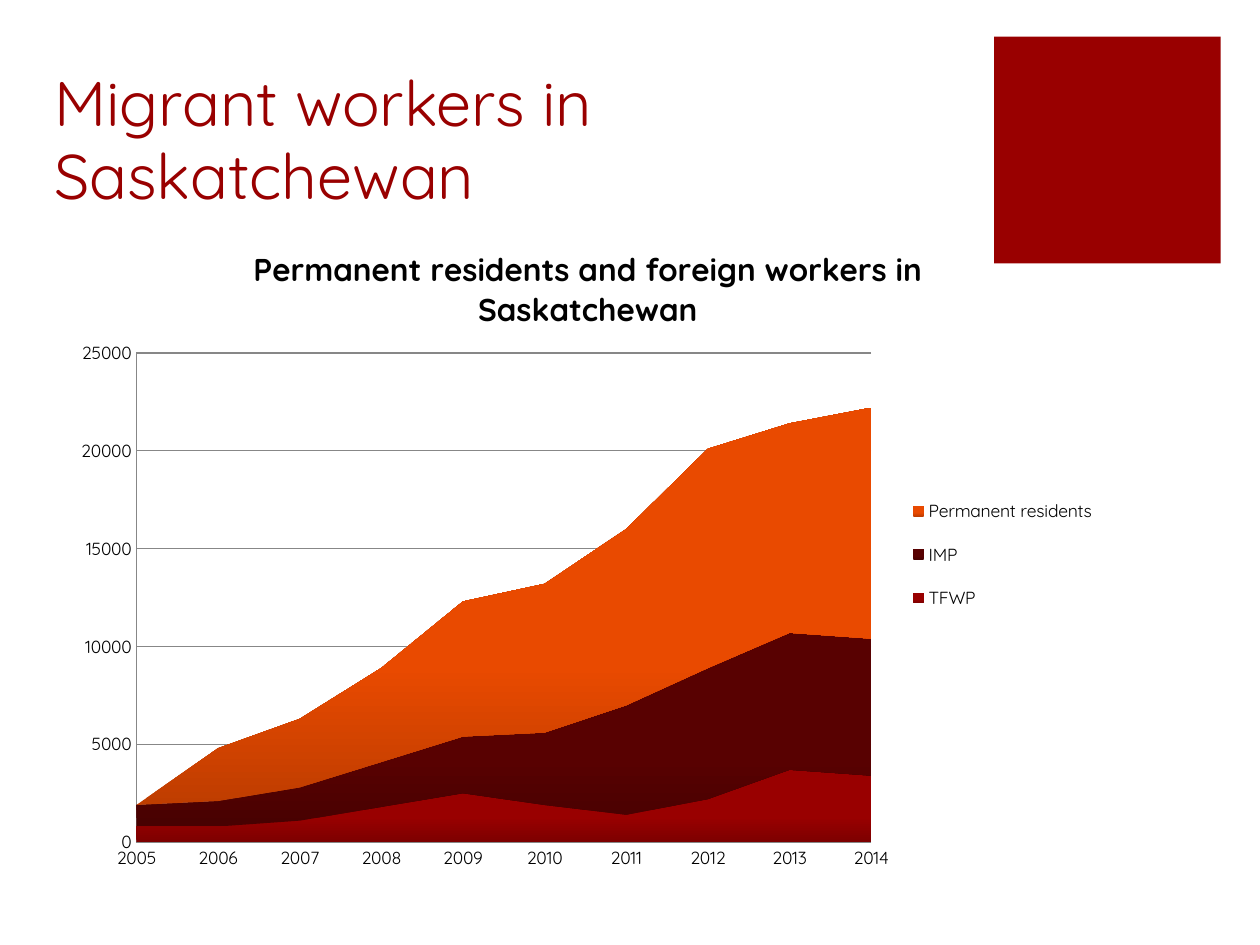
from dataclasses import dataclass
from typing import Any

from lxml.etree import SubElement
from pptx import Presentation
from pptx.chart.chart import Chart
from pptx.chart.data import CategoryChartData
from pptx.dml.color import RGBColor
from pptx.enum.chart import XL_CHART_TYPE, XL_LEGEND_POSITION, XL_TICK_MARK
from pptx.enum.shapes import MSO_SHAPE
from pptx.enum.text import MSO_ANCHOR
from pptx.oxml import parse_xml
from pptx.oxml.ns import nsdecls, qn
from pptx.slide import Slide
from pptx.util import Cm, Pt


@dataclass(frozen=True)
class Theme:
    font: str = "Quicksand"
    red: RGBColor = RGBColor(0x99, 0x00, 0x00)
    maroon: RGBColor = RGBColor(0x58, 0x01, 0x01)
    orange: RGBColor = RGBColor(0xE9, 0x4A, 0x00)
    black: RGBColor = RGBColor(0x00, 0x00, 0x00)
    grid: RGBColor = RGBColor(0x87, 0x87, 0x87)
    title_size: Pt = Pt(36)
    chart_title_size: Pt = Pt(18)
    label_size: Pt = Pt(10)


@dataclass(frozen=True)
class Box:
    """Place and size, in centimetres on the slide or as fractions of the chart."""
    left: float
    top: float
    width: float
    height: float

    def lengths(self) -> tuple[Cm, Cm, Cm, Cm]:
        return Cm(self.left), Cm(self.top), Cm(self.width), Cm(self.height)


@dataclass(frozen=True)
class AreaSeries:
    name: str
    values: tuple[int | None, ...]
    color: RGBColor


THEME = Theme()
YEARS = [str(year) for year in range(2005, 2015)]
SERIES = [
    AreaSeries("TFWP", (800, 800, 1100, 1800, 2500, 1900, 1400, 2200, 3700, 3400), THEME.red),
    AreaSeries("IMP", (1100, 1300, 1700, 2300, 2900, 3700, 5600, 6700, 7000, 7000), THEME.maroon),
    AreaSeries("Permanent residents",
               (None, 2700, 3500, 4800, 6900, 7600, 9000, 11200, 10700, 11800), THEME.orange),
]


def apply_format(target: Any, values: dict[str, Any]) -> None:
    for name, value in values.items():
        setattr(target, name, value)


def style_font(font: Any, size: Pt, color: RGBColor, bold: bool = False) -> None:
    apply_format(font, {"name": THEME.font, "size": size, "bold": bold})
    font.color.rgb = color


def add_accent_square(slide: Slide, box: Box) -> None:
    square = slide.shapes.add_shape(MSO_SHAPE.RECTANGLE, *box.lengths())
    square.shadow.inherit = False
    square.fill.solid()
    square.fill.fore_color.rgb = THEME.red
    square.line.fill.background()


def add_title(slide: Slide, text: str, box: Box) -> None:
    frame = slide.shapes.add_textbox(*box.lengths()).text_frame
    apply_format(frame, {"word_wrap": True, "vertical_anchor": MSO_ANCHOR.BOTTOM})
    paragraph = frame.paragraphs[0]
    paragraph.line_spacing = 0.97
    run = paragraph.add_run()
    run.text = text
    style_font(run.font, THEME.title_size, THEME.red)


def manual_layout(box: Box, inner: bool = False) -> Any:
    """Build a chart layout element from fractions of the chart's size."""
    layout = parse_xml(f"<c:layout {nsdecls('c')}><c:manualLayout/></c:layout>")
    settings = {"layoutTarget": "inner"} if inner else {}
    settings |= {"xMode": "edge", "yMode": "edge", "x": box.left, "y": box.top,
                 "w": box.width, "h": box.height}
    for tag, value in settings.items():
        SubElement(layout[0], qn(f"c:{tag}")).set("val", str(value))
    return layout


def shade_area(fill: Any, color: RGBColor) -> None:
    """Fade from a darker shade at the bottom to the plain colour."""
    dark = RGBColor(*(round(channel * 0.82) for channel in color))
    fill.gradient()
    fill.gradient_angle = 90
    for stop, shade, position in zip(fill.gradient_stops, (dark, color), (0, 0.35)):
        stop.color.rgb = shade
        stop.position = position


def style_axes(chart: Chart) -> None:
    for axis in (chart.category_axis, chart.value_axis):
        apply_format(axis, {"major_tick_mark": XL_TICK_MARK.NONE,
                            "minor_tick_mark": XL_TICK_MARK.NONE})
        axis.format.line.color.rgb = THEME.grid
    value_axis = chart.value_axis
    apply_format(value_axis, {"minimum_scale": 0, "maximum_scale": 25000,
                              "major_unit": 5000, "has_major_gridlines": True})
    value_axis.major_gridlines.format.line.color.rgb = THEME.grid
    for crossing in chart.element.iter(qn("c:crossBetween")):
        crossing.set("val", "midCat")


def place_chart_parts(chart: Chart, plot: Box, legend: Box) -> None:
    plot_area = chart.element.find(".//" + qn("c:plotArea"))
    for old_layout in plot_area.findall(qn("c:layout")):
        plot_area.remove(old_layout)
    plot_area.insert(0, manual_layout(plot, inner=True))
    legend_element = chart.element.find(".//" + qn("c:legend"))
    for old_layout in legend_element.findall(qn("c:layout")):
        legend_element.remove(old_layout)
    legend_element.find(qn("c:legendPos")).addnext(manual_layout(legend))


def add_workers_chart(slide: Slide, title: str, box: Box) -> None:
    data = CategoryChartData()
    data.categories = YEARS
    for entry in SERIES:
        data.add_series(entry.name, entry.values)
    chart = slide.shapes.add_chart(XL_CHART_TYPE.AREA_STACKED, *box.lengths(), data).chart
    style_font(chart.font, THEME.label_size, THEME.black)
    apply_format(chart, {"has_title": True, "has_legend": True})
    run = chart.chart_title.text_frame.paragraphs[0].add_run()
    run.text = title
    style_font(run.font, THEME.chart_title_size, THEME.black, bold=True)
    apply_format(chart.legend, {"position": XL_LEGEND_POSITION.RIGHT,
                                "include_in_layout": False})
    plot = chart.plots[0]
    plot.vary_by_categories = False
    for series, entry in zip(plot.series, SERIES):
        shade_area(series.format.fill, entry.color)
    style_axes(chart)
    place_chart_parts(chart, Box(0.07, 0.2, 0.7, 0.74), Box(0.8, 0.39, 0.19, 0.23))


def main() -> None:
    presentation = Presentation()
    apply_format(presentation, {"slide_width": Cm(25.4), "slide_height": Cm(19.05)})
    slide = presentation.slides.add_slide(presentation.slide_layouts[6])
    add_accent_square(slide, Box(20.04, 0.74, 4.57, 4.57))
    add_title(slide, "Migrant workers in Saskatchewan", Box(0.84, 1.02, 19.2, 3.43))
    add_workers_chart(slide, "Permanent residents and foreign workers in Saskatchewan",
                      Box(1.27, 4.45, 21.16, 13.33))
    presentation.save("out.pptx")


if __name__ == "__main__":
    main()
